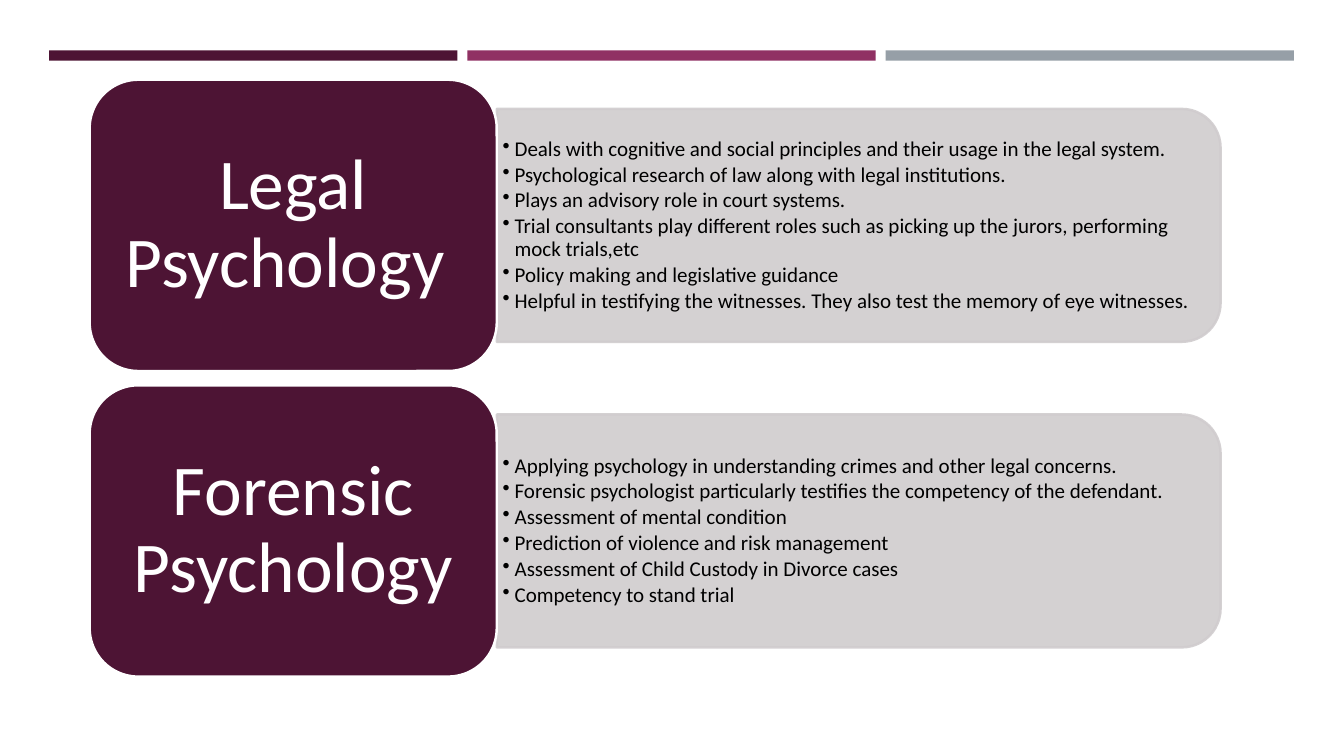
import dataclasses

import pptx
import pptx.dml.color
import pptx.enum.shapes
import pptx.enum.text
import pptx.oxml
import pptx.oxml.ns
import pptx.util

Cm = pptx.util.Cm
Pt = pptx.util.Pt
Shape = pptx.enum.shapes.MSO_SHAPE


@dataclasses.dataclass
class Theme:
    font: str = "Calibri"
    plum: str = "4D1434"
    berry: str = "903163"
    slate: str = "969FA7"
    panel: str = "D0CCCE"
    white: str = "FFFFFF"
    black: str = "000000"
    title: float = 51
    body: float = 15
    edge: float = 1.75


class Deck:
    def __init__(self, theme, slide):
        self.theme = theme
        self.slide = slide

    def paint(self, format, color, alpha=None):
        format.solid()
        format.fore_color.rgb = pptx.dml.color.RGBColor.from_string(color)
        if alpha:
            space = pptx.oxml.ns.nsdecls("a")
            node = pptx.oxml.parse_xml(f'<a:alpha {space} val="{alpha * 1000}"/>')
            # The colour format exposes no alpha, so reach its node
            format._xPr.find(".//" + pptx.oxml.ns.qn("a:srgbClr")).append(node)

    def block(self, kind, box, fill, edge=None, alpha=None):
        shape = self.slide.shapes.add_shape(kind, *map(Cm, box))
        shape.shadow.inherit = False
        self.paint(shape.fill, fill, alpha)
        if edge:
            shape.line.width = Pt(self.theme.edge)
            self.paint(shape.line.fill, edge, alpha)
        else:
            shape.line.fill.background()
        return shape

    def frame(self, shape, side, top):
        frame = shape.text_frame
        frame.word_wrap = True
        frame.vertical_anchor = pptx.enum.text.MSO_ANCHOR.MIDDLE
        frame.margin_left = frame.margin_right = Cm(side)
        frame.margin_top = frame.margin_bottom = Cm(top)
        return frame

    def style(self, para, size, color):
        para.line_spacing = 0.9
        para.font.name = self.theme.font
        para.font.size = Pt(size)
        para.font.color.rgb = pptx.dml.color.RGBColor.from_string(color)

    def bar(self, box, color):
        self.block(Shape.RECTANGLE, box, color)

    def panel(self, mid_x, mid_y, width, height):
        # Turned a quarter so that the round corners face right
        box = (mid_x - height / 2, mid_y - width / 2, height, width)
        tint = self.theme.panel
        shape = self.block(Shape.ROUND_2_SAME_RECTANGLE, box, tint, tint, 90)
        shape.rotation = 90

    def list(self, box, items):
        shape = self.slide.shapes.add_textbox(*map(Cm, box))
        frame = self.frame(shape, 0.15, 0.08)
        for index, item in enumerate(items):
            para = frame.paragraphs[0] if index == 0 else frame.add_paragraph()
            para.text = item
            para.level = 1
            para.space_after = Pt(0.15 * self.theme.body)
            props = para._p.get_or_add_pPr()
            props.set("marL", str(Cm(0.3)))
            props.set("indent", str(-Cm(0.3)))
            space = pptx.oxml.ns.nsdecls("a")
            props.append(pptx.oxml.parse_xml(f'<a:buChar {space} char="•"/>'))
            self.style(para, self.theme.body, self.theme.black)

    def card(self, box, text):
        shape = self.block(Shape.ROUNDED_RECTANGLE, box, self.theme.plum, self.theme.white)
        para = self.frame(shape, 0.53, 0.28).paragraphs[0]
        para.text = text
        para.alignment = pptx.enum.text.PP_ALIGN.CENTER
        self.style(para, self.theme.title, self.theme.white)


TOPICS = [
    ("Legal Psychology ", [
        "Deals with cognitive and social principles and their usage in the legal system.",
        "Psychological research of law along with legal institutions.",
        "Plays an advisory role in court systems.",
        "Trial consultants play different roles such as picking up the jurors, "
        "performing mock trials,etc",
        "Policy making and legislative guidance",
        "Helpful in testifying the witnesses. They also test the memory of eye witnesses.",
    ]),
    ("Forensic Psychology", [
        "Applying psychology in understanding crimes and other legal concerns.",
        "Forensic psychologist particularly testifies the competency of the defendant.",
        "Assessment of mental condition",
        "Prediction of violence and risk management",
        "Assessment of Child Custody in Divorce cases",
        "Competency to stand trial",
    ]),
]


def main():
    show = pptx.Presentation()
    show.slide_width, show.slide_height = Cm(33.87), Cm(19.05)
    theme = Theme()
    deck = Deck(theme, show.slides.add_slide(show.slide_layouts[6]))

    # Bars along the top
    for index, color in enumerate([theme.plum, theme.berry, theme.slate]):
        deck.bar((1.24 + 10.54 * index, 1.27, 10.29, 0.26), color)

    # One row per topic: panel, list, then card
    for index, (title, items) in enumerate(TOPICS):
        mid = 5.68 + 7.7 * index
        deck.panel(21.64, mid, 18.24, 5.87)
        deck.list((12.52, mid - 2.65, 17.96, 5.3), items)
        deck.card((2.26, mid - 3.67, 10.26, 7.34), title)

    show.save("out.pptx")


if __name__ == "__main__":
    main()
